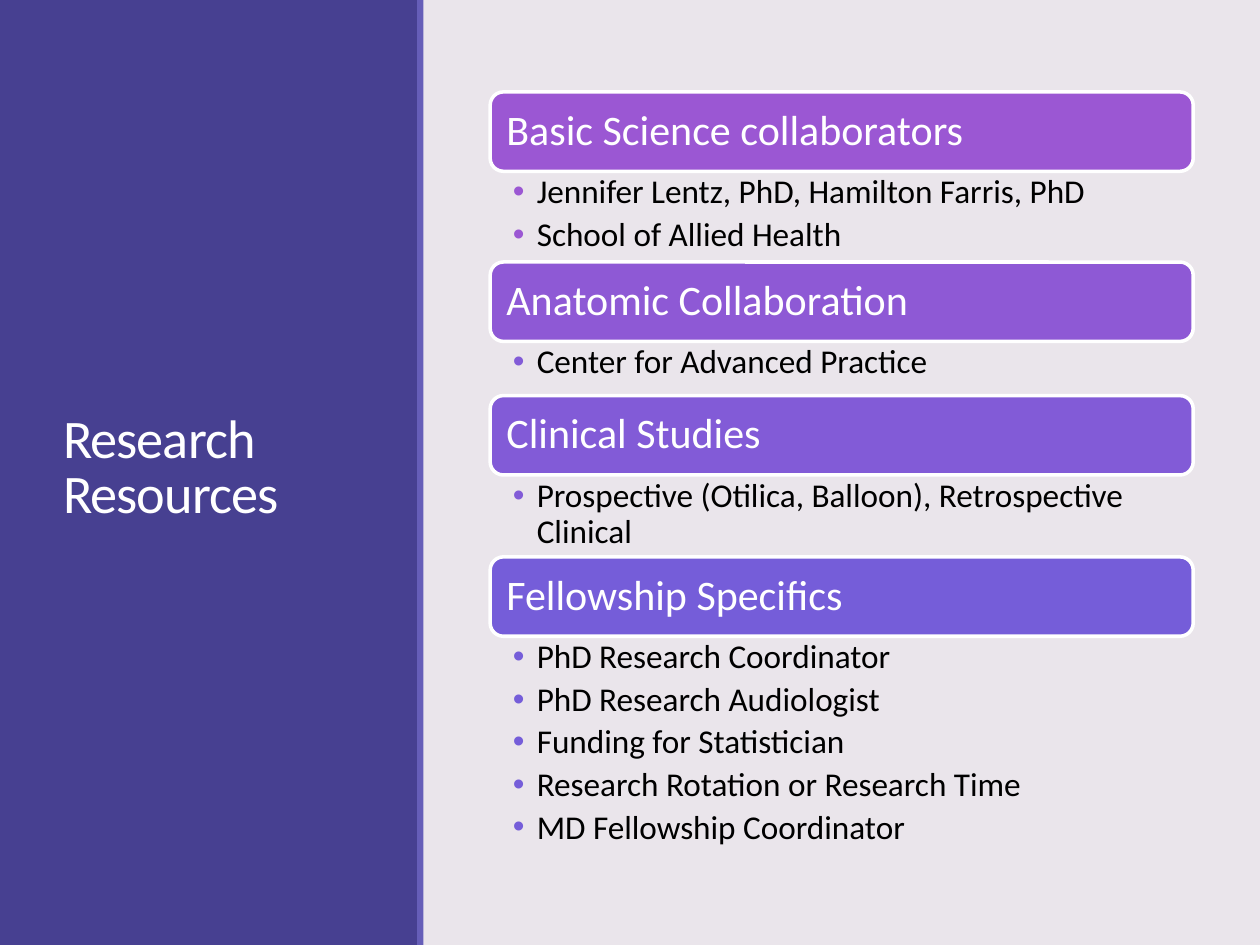
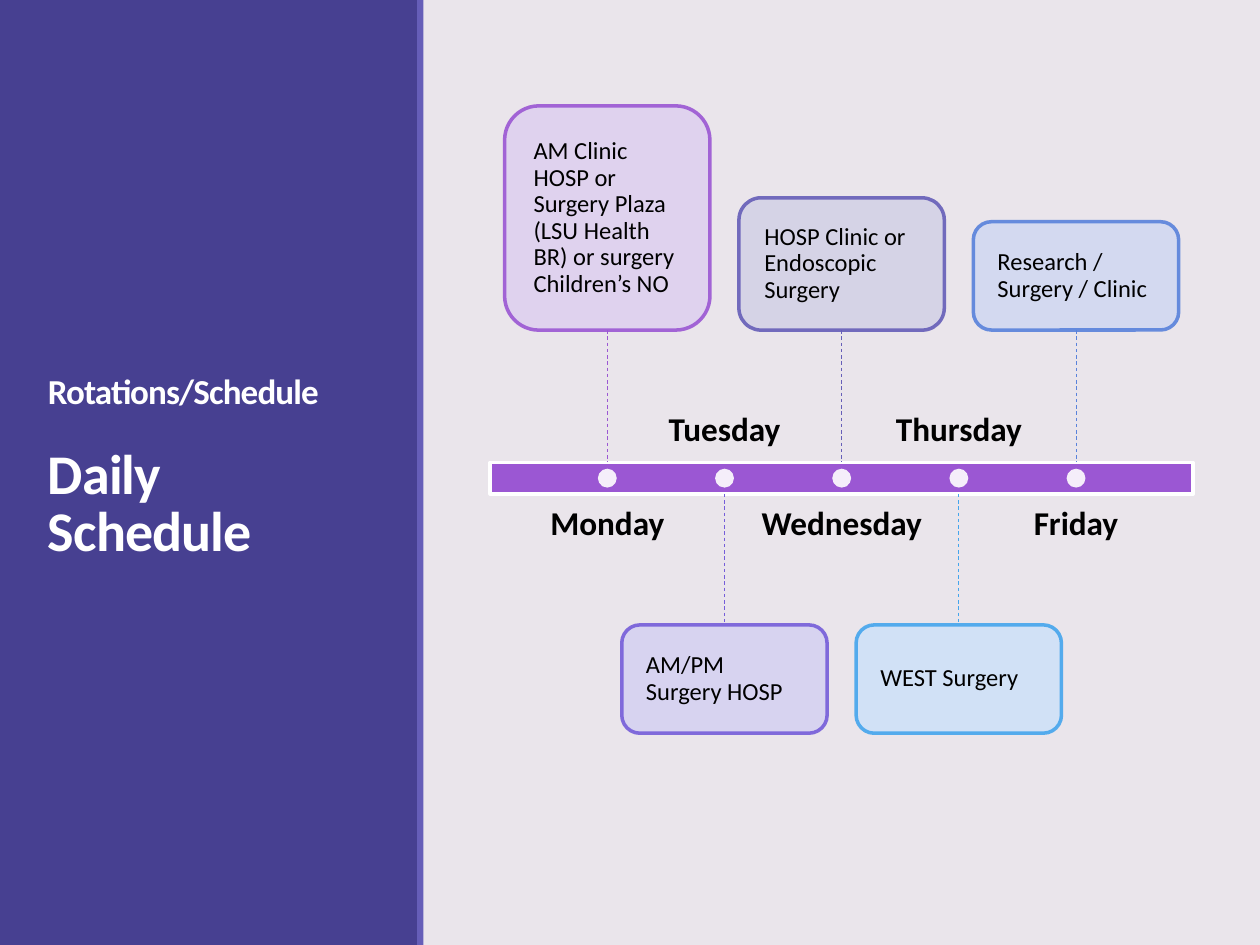
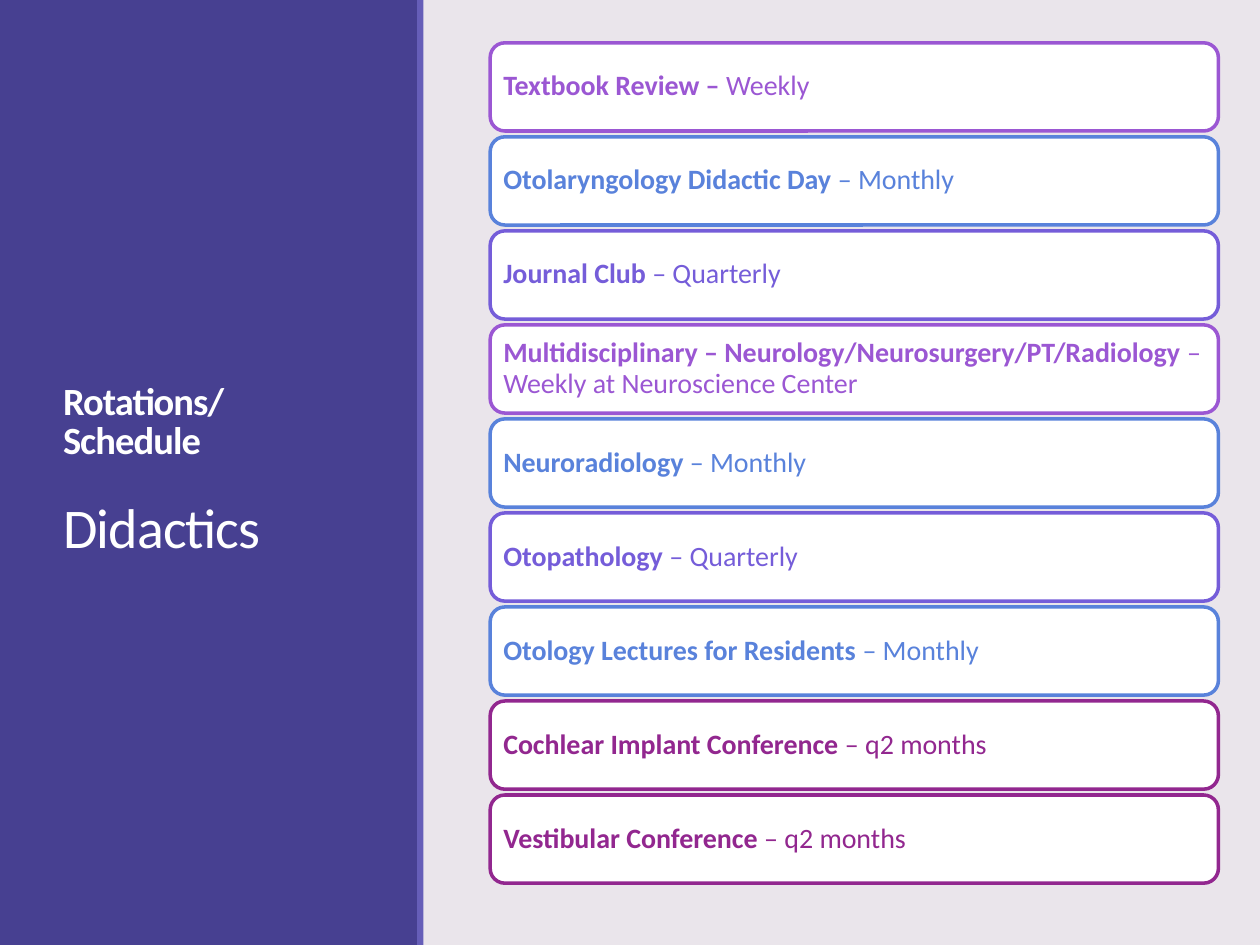
from lxml import etree
from pptx import Presentation
from pptx.dml.color import RGBColor
from pptx.enum.dml import MSO_LINE
from pptx.enum.shapes import MSO_CONNECTOR, MSO_SHAPE
from pptx.enum.text import MSO_ANCHOR, MSO_AUTO_SIZE, PP_ALIGN
from pptx.oxml.ns import qn
from pptx.util import Inches, Pt

RECT, ROUND, OVAL = MSO_SHAPE.RECTANGLE, MSO_SHAPE.ROUNDED_RECTANGLE, MSO_SHAPE.OVAL
STRAIGHT, DASH = MSO_CONNECTOR.STRAIGHT, MSO_LINE.DASH
TOP, MIDDLE, BOTTOM = MSO_ANCHOR.TOP, MSO_ANCHOR.MIDDLE, MSO_ANCHOR.BOTTOM
LEFT, CENTER = PP_ALIGN.LEFT, PP_ALIGN.CENTER
NO_FIT = MSO_AUTO_SIZE.NONE

FONT = "Calibri"
COLORS = {
    "background": "EAE5EB", "panel": "474091", "edge": "665EB8",
    "white": "FFFFFF", "black": "000000",
    "orchid": "9B57D3", "amethyst": "8E59D5", "violet": "825BD7",
    "iris": "755DD9", "blue": "5982DB", "sky": "45A5ED", "plum": "92278F",
    "orchid_tint": "DED1EF", "iris_tint": "D6D2F1", "edge_tint": "D3D2E6",
    "sky_tint": "CFE1F8", "blue_tint": "D1D8F1",
}
LAYOUT_COMPARISON, LAYOUT_TITLE_ONLY = 4, 5
CONTENT_LEFT, CONTENT_WIDTH = 3.89, 5.58

# heading, heading colour, bullet colour, list height, items
RESOURCES = [
    ("Basic Science collaborators", "orchid", "orchid", 0.72,
     ["Jennifer Lentz, PhD, Hamilton Farris, PhD", "School of Allied Health"]),
    ("Anatomic Collaboration", "amethyst", "violet", 0.43,
     ["Center for Advanced Practice"]),
    ("Clinical Studies", "violet", "violet", 0.65,
     ["Prospective (Otilica, Balloon), Retrospective Clinical"]),
    ("Fellowship Specifics", "iris", "iris", 1.79,
     ["PhD Research Coordinator", "PhD Research Audiologist",
      "Funding for Statistician", "Research Rotation or Research Time",
      "MD Fellowship Coordinator"]),
]
# day, activity, colour, card height
DAYS = [
    ("Monday", "AM Clinic HOSP or Surgery Plaza (LSU Health BR) or surgery "
     "Children’s NO", "orchid", 1.78),
    ("Tuesday", "AM/PM Surgery HOSP", "iris", 0.86),
    ("Wednesday", "HOSP Clinic or Endoscopic Surgery", "edge", 1.05),
    ("Thursday", "WEST Surgery", "sky", 0.86),
    ("Friday", "Research / Surgery / Clinic", "blue", 0.86),
]
# bold part, regular part, colour
DIDACTICS = [
    ("Textbook Review – ", "Weekly", "orchid"),
    ("Otolaryngology Didactic Day ", "– Monthly", "blue"),
    ("Journal Club ", "– Quarterly", "iris"),
    ("Multidisciplinary – Neurology/Neurosurgery/PT/Radiology ",
     "– Weekly at Neuroscience Center", "orchid"),
    ("Neuroradiology", " – Monthly", "blue"),
    ("Otopathology", " – Quarterly", "iris"),
    ("Otology Lectures for Residents ", "– Monthly", "blue"),
    ("Cochlear Implant Conference ", "– q2 months", "plum"),
    ("Vestibular Conference ", "– q2 months", "plum"),
]


def rgb(name):
    return RGBColor.from_string(COLORS[name])


def set_attrs(obj, values):
    for name, value in values.items():
        setattr(obj, name, value)


def place(sp, left, top, width, height):
    set_attrs(sp, {"left": Inches(left), "top": Inches(top),
                   "width": Inches(width), "height": Inches(height)})


def set_frame(sp, anchor, insets):
    """Prepare the text frame; insets are left, top, right and bottom."""
    tf = sp.text_frame
    sides = ("margin_left", "margin_top", "margin_right", "margin_bottom")
    set_attrs(tf, {"word_wrap": True, "auto_size": NO_FIT, "vertical_anchor": anchor})
    set_attrs(tf, {side: Inches(v) for side, v in zip(sides, insets)})
    return tf


def write(p, runs, size, color, align=LEFT, spacing=0.9, before=0, after=0):
    """Fill a paragraph with (text, bold) runs."""
    set_attrs(p, {"alignment": align, "line_spacing": spacing,
                  "space_before": Pt(before), "space_after": Pt(after)})
    for text, bold in runs:
        r = p.add_run()
        r.text = text
        set_attrs(r.font, {"name": FONT, "size": Pt(size), "bold": bold})
        r.font.color.rgb = rgb(color)


def add_block(s, kind, box, fill, line=None, alpha=None):
    sp = s.shapes.add_shape(kind, *map(Inches, box))
    sp.shadow.inherit = False
    sp.fill.solid()
    sp.fill.fore_color.rgb = rgb(fill)
    if line:
        sp.line.color.rgb = rgb(line)
        sp.line.width = Pt(2)
    else:
        sp.line.fill.background()
    if alpha:
        for color in sp.element.spPr.iter(qn("a:srgbClr")):
            etree.SubElement(color, qn("a:alpha"), val=str(alpha * 1000))
    return sp


def add_label(s, box, text, anchor):
    sp = s.shapes.add_textbox(*map(Inches, box))
    tf = set_frame(sp, anchor, [0] * 4)
    write(tf.paragraphs[0], [(text, True)], 19, "black", CENTER)


def add_dashed_line(s, x, y1, y2, color):
    cxn = s.shapes.add_connector(STRAIGHT, *map(Inches, (x, y1, x, y2)))
    set_attrs(cxn.line, {"width": Pt(0.5), "dash_style": DASH})
    cxn.line.color.rgb = rgb(color)
    etree.SubElement(cxn.element.spPr, qn("a:effectLst"))


def add_bullet(p, color):
    pPr = p._p.get_or_add_pPr()
    indent = Inches(0.19)
    pPr.set("marL", str(indent))
    pPr.set("indent", str(-indent))
    bu_color = etree.SubElement(pPr, qn("a:buClr"))
    etree.SubElement(bu_color, qn("a:srgbClr"), val=COLORS[color])
    etree.SubElement(pPr, qn("a:buFont"), typeface="Arial")
    etree.SubElement(pPr, qn("a:buChar"), char="•")


def fill_list(sp, box, items, color):
    place(sp, *box)
    tf = set_frame(sp, TOP, (0.18, 0.03, 0.19, 0.03))
    for i, item in enumerate(items):
        p = tf.add_paragraph() if i else tf.paragraphs[0]
        add_bullet(p, color)
        write(p, [(item, False)], 19, "black", after=3.8)


def add_slide(prs, layout, title_box, title_lines):
    """Add a slide with the side panel; title lines are (text, size, bold, before)."""
    s = prs.slides.add_slide(prs.slide_layouts[layout])
    title = s.shapes.title
    place(title, *title_box)
    panel = add_block(s, RECT, (0, 0, 3.32, 7.5), "panel")
    title.element.addprevious(panel.element)
    add_block(s, RECT, (3.31, 0, 0.05, 7.5), "edge")
    tf = set_frame(title, MIDDLE, (0.1, 0.05, 0.1, 0.05))
    for i, (text, size, bold, before) in enumerate(title_lines):
        p = tf.add_paragraph() if i else tf.paragraphs[0]
        write(p, [(text, bold)], size, "white", spacing=0.85, before=before)
        for r in p.runs:
            r.font._element.set("spc", "-50")
    return s


def add_resources(prs):
    s = add_slide(prs, LAYOUT_COMPARISON, (0.4, 0.57, 2.53, 6.31),
                  [("Research Resources", 31, False, 0)])
    lists = [sp for sp in s.placeholders if sp.placeholder_format.idx in range(1, 5)]
    top, heading_height = 0.73, 0.63
    for sp, (heading, fill, bullet, height, items) in zip(lists, RESOURCES):
        bar = add_block(s, ROUND, (CONTENT_LEFT, top, CONTENT_WIDTH, heading_height),
                        fill, "white")
        tf = set_frame(bar, MIDDLE, [0.1] * 4)
        write(tf.paragraphs[0], [(heading, False)], 24, "white")
        top += heading_height
        fill_list(sp, (CONTENT_LEFT, top, CONTENT_WIDTH, height), items, bullet)
        top += height


def add_schedule(prs):
    s = add_slide(prs, LAYOUT_TITLE_ONLY, (0.28, 0.57, 2.8, 6.31),
                  [("Rotations/Schedule", 20, True, 0), ("Daily Schedule", 32, True, 21)])
    bar_top, bar_height = 3.67, 0.25
    card_width, label_width, label_height, dot = 1.63, 1.49, 0.7, 0.15
    add_block(s, RECT, (CONTENT_LEFT, bar_top, CONTENT_WIDTH, bar_height),
              "orchid", "white")
    for i, (day, activity, color, height) in enumerate(DAYS):
        x = 4.82 + i * 0.93
        if i % 2 == 0:  # card above the bar, day below it
            card_top, label_top, anchor = 2.62 - height, 4.02, TOP
            ends = (2.62, bar_top)
        else:
            card_top, label_top, anchor = 4.96, 2.86, BOTTOM
            ends = (bar_top + bar_height, card_top)
        card = add_block(s, ROUND, (x - card_width / 2, card_top, card_width, height),
                         color + "_tint", color, 90)
        tf = set_frame(card, MIDDLE, [0.15] * 4)
        write(tf.paragraphs[0], [(activity, False)], 14, "black")
        add_dashed_line(s, x, *ends, color)
        add_label(s, (x - label_width / 2, label_top, label_width, label_height),
                  day, anchor)
        add_block(s, OVAL, (x - dot / 2, bar_top + (bar_height - dot) / 2, dot, dot),
                  "white", alpha=90)


def add_didactics(prs):
    s = add_slide(prs, LAYOUT_TITLE_ONLY, (0.4, 0.66, 2.53, 6.17),
                  [("Rotations/Schedule", 22, True, 0), ("Didactics", 32, False, 23)])
    first_top, last_top = 0.34, 6.31
    pitch = (last_top - first_top) / (len(DIDACTICS) - 1)
    for i, (topic, frequency, color) in enumerate(DIDACTICS):
        card = add_block(s, ROUND, (CONTENT_LEFT, first_top + i * pitch, 5.78, 0.7),
                         "white", color)
        tf = set_frame(card, MIDDLE, [0.07] * 4)
        write(tf.paragraphs[0], [(topic, True), (frequency, False)], 16, color)


def main():
    prs = Presentation()
    set_attrs(prs, {"slide_width": Inches(10), "slide_height": Inches(7.5)})
    background = prs.slide_master.background.fill
    background.solid()
    background.fore_color.rgb = rgb("background")
    add_resources(prs)
    add_schedule(prs)
    add_didactics(prs)
    prs.save("out.pptx")


if __name__ == "__main__":
    main()
